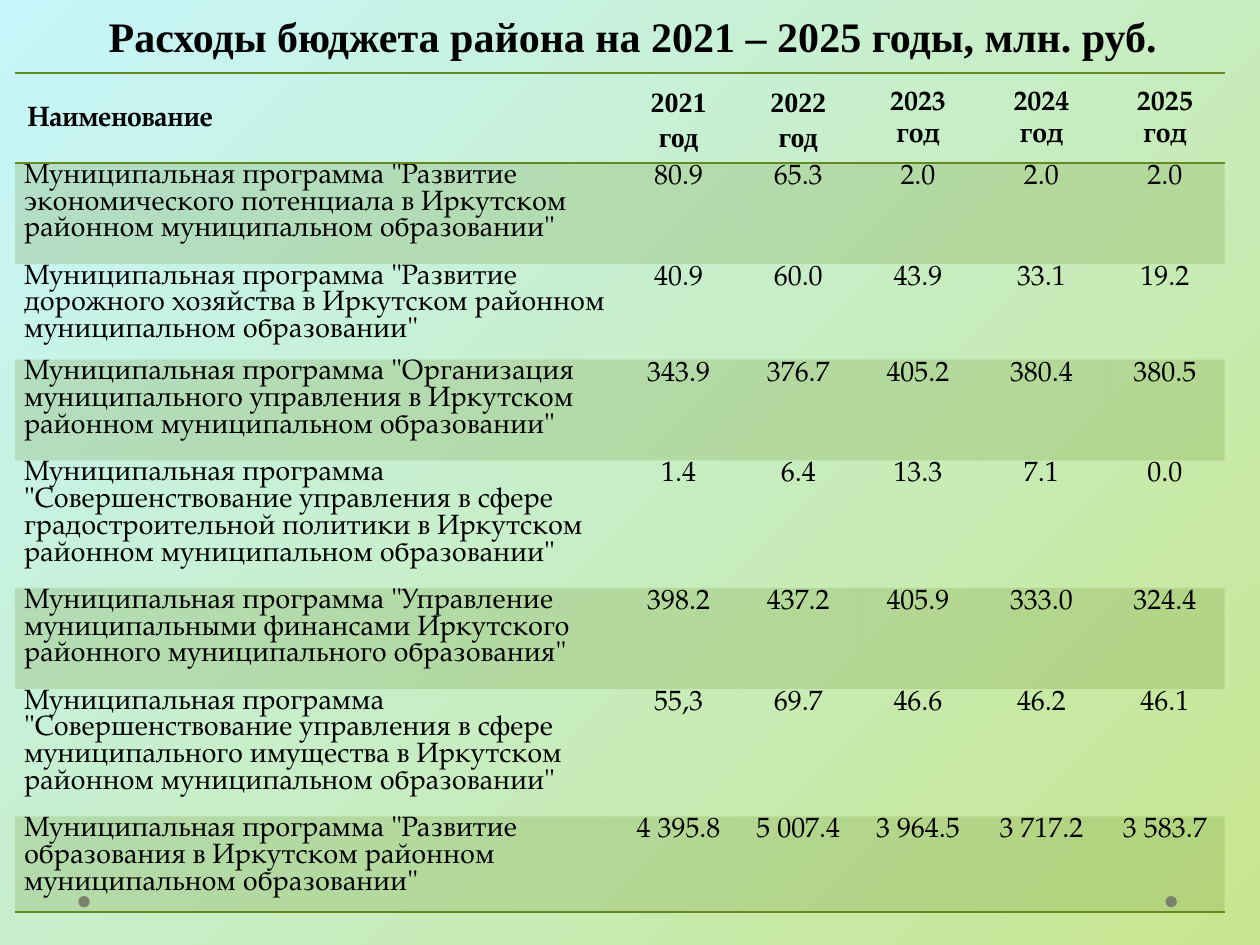
from typing import NamedTuple

from lxml.etree import SubElement
from pptx import Presentation
from pptx.dml.color import RGBColor
from pptx.enum.shapes import MSO_SHAPE
from pptx.enum.text import MSO_ANCHOR, PP_ALIGN
from pptx.oxml.ns import qn
from pptx.util import Pt

SERIF = "TeX Gyre Pagella"
TIMES = "Times New Roman"
GREEN = "63891F"
NO_STYLE = "{2D5ABB26-0587-4C30-8999-92F81FD0307C}"


class Program(NamedTuple):
    name: str
    amounts: tuple[str, ...]


class Heading(NamedTuple):
    text: str
    font: str
    align: PP_ALIGN = PP_ALIGN.CENTER


HEADINGS = [
    Heading("Наименование", SERIF, PP_ALIGN.LEFT),
    Heading("2021 год", TIMES),
    Heading("2022 год", TIMES),
    Heading("2023 год", SERIF),
    Heading("2024 год", SERIF),
    Heading("2025 год", SERIF),
]
PROGRAMS = [
    Program("Развитие экономического потенциала в Иркутском районном муниципальном образовании",
            ("80.9", "65.3", "2.0", "2.0", "2.0")),
    Program("Развитие дорожного хозяйства в Иркутском районном муниципальном образовании",
            ("40.9", "60.0", "43.9", "33.1", "19.2")),
    Program("Организация муниципального управления в Иркутском районном муниципальном образовании",
            ("343.9", "376.7", "405.2", "380.4", "380.5")),
    Program("Совершенствование управления в сфере градостроительной политики "
            "в Иркутском районном муниципальном образовании",
            ("1.4", "6.4", "13.3", "7.1", "0.0")),
    Program("Управление муниципальными финансами Иркутского районного муниципального образования",
            ("398.2", "437.2", "405.9", "333.0", "324.4")),
    Program("Совершенствование управления в сфере муниципального имущества "
            "в Иркутском районном муниципальном образовании",
            ("55,3", "69.7", "46.6", "46.2", "46.1")),
    Program("Развитие образования в Иркутском районном муниципальном образовании",
            ("4 395.8", "5 007.4", "3 964.5", "3 717.2", "3 583.7")),
]
COLUMN_WIDTHS = [345, 68.4, 68.4, 68.4, 72.7, 68.4]
ROW_HEIGHTS = [50.6, 57.6, 53.8, 57.6, 57.6, 57.6, 57.6, 46.6]


def color(value: str) -> RGBColor:
    return RGBColor.from_string(value)


def write(frame, text: str, *, font: str = SERIF, size: float = 16, bold: bool = False,
          align: PP_ALIGN = PP_ALIGN.LEFT, spacing: float = 1.0) -> None:
    para = frame.paragraphs[0]
    para.alignment = align
    para.line_spacing = spacing
    span = para.add_run()
    span.text = text
    span.font.name = font
    span.font.size = Pt(size)
    span.font.bold = bold
    span.font.color.rgb = color("000000")


def set_margins(cell, left: float, top: float, right: float, bottom: float) -> None:
    cell.margin_left, cell.margin_top = Pt(left), Pt(top)
    cell.margin_right, cell.margin_bottom = Pt(right), Pt(bottom)


def add_border(cell, side: str) -> None:
    properties = cell._tc.get_or_add_tcPr()
    line = SubElement(properties, qn(f"a:{side}"), w=str(Pt(1)))
    fill = SubElement(line, qn("a:solidFill"))
    SubElement(fill, qn("a:srgbClr"), val=GREEN)


def fill_cell(cell, shaded: bool) -> None:
    if not shaded:
        cell.fill.background()
        return
    cell.fill.solid()
    cell.fill.fore_color.rgb = color(GREEN)
    shade = cell._tc.tcPr.find(f"{qn('a:solidFill')}/{qn('a:srgbClr')}")
    SubElement(shade, qn("a:alpha"), val="20000")


def add_dot(page, left: float) -> None:
    dot = page.shapes.add_shape(MSO_SHAPE.OVAL, Pt(left), Pt(512), Pt(6.5), Pt(6.5))
    dot.shadow.inherit = False
    dot.fill.solid()
    dot.fill.fore_color.rgb = color("808080")
    dot.line.fill.background()


def add_title(page, text: str) -> None:
    box = page.shapes.add_textbox(Pt(20), Pt(0.7), Pt(683), Pt(37.5))
    box.text_frame.word_wrap = True
    box.text_frame.vertical_anchor = MSO_ANCHOR.BOTTOM
    write(box.text_frame, text, font=TIMES, size=24, bold=True, align=PP_ALIGN.CENTER)


def add_budget_table(page) -> None:
    frame = page.shapes.add_table(len(ROW_HEIGHTS), len(COLUMN_WIDTHS), Pt(8.6), Pt(41.8),
                                  Pt(sum(COLUMN_WIDTHS)), Pt(sum(ROW_HEIGHTS)))
    table = frame.table
    frame.element.find(f".//{qn('a:tableStyleId')}").text = NO_STYLE
    table.horz_banding = False
    for column, width in zip(table.columns, COLUMN_WIDTHS):
        column.width = Pt(width)
    for row, height in zip(table.rows, ROW_HEIGHTS):
        row.height = Pt(height)

    for index, heading in enumerate(HEADINGS):
        cell = table.cell(0, index)
        cell.vertical_anchor = MSO_ANCHOR.MIDDLE
        write(cell.text_frame, heading.text, font=heading.font, bold=True,
              align=heading.align, spacing=1.15)
        add_border(cell, "lnT")
        add_border(cell, "lnB")
        fill_cell(cell, False)

    for number, program in enumerate(PROGRAMS, start=1):
        name_cell, *amount_cells = table.rows[number].cells
        set_margins(name_cell, 5.2, 0, 5.2, 0)
        write(name_cell.text_frame, f'Муниципальная программа "{program.name}"', spacing=0.95)
        for cell, amount in zip(amount_cells, program.amounts):
            set_margins(cell, 0.7, 0.7, 0.7, 0)
            write(cell.text_frame, amount, align=PP_ALIGN.CENTER)
        for cell in (name_cell, *amount_cells):
            if number == len(PROGRAMS):
                add_border(cell, "lnB")
            fill_cell(cell, number % 2 == 1)


def main() -> None:
    deck = Presentation()
    deck.slide_width, deck.slide_height = Pt(720), Pt(540)
    page = deck.slides.add_slide(deck.slide_layouts[6])
    backdrop = page.background.fill
    backdrop.gradient()
    backdrop.gradient_angle = 315
    for stop, value in zip(backdrop.gradient_stops, ("C7F6FB", "C7E68F")):
        stop.color.rgb = color(value)
    for left in (666, 44.8):
        add_dot(page, left)
    add_title(page, "Расходы бюджета района на 2021 – 2025 годы, млн. руб.")
    add_budget_table(page)
    deck.save("out.pptx")


if __name__ == "__main__":
    main()
